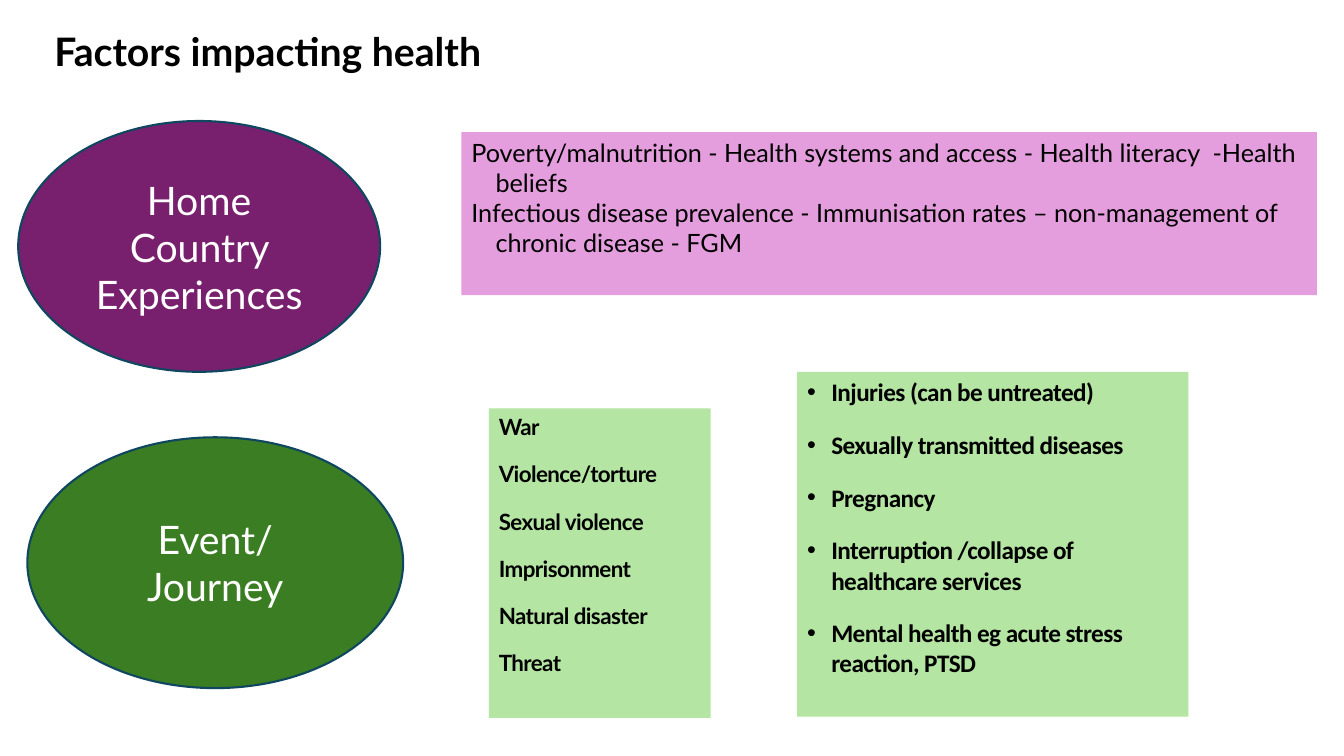
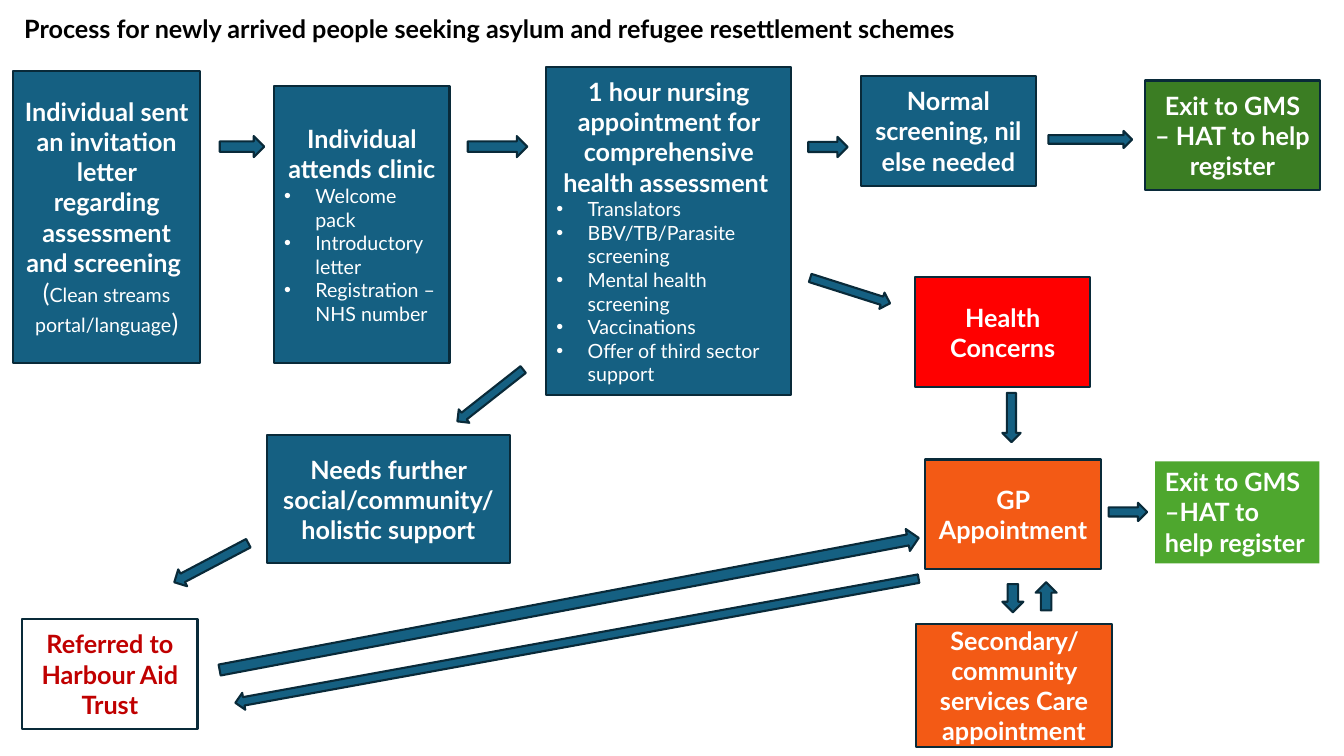
from dataclasses import dataclass, field
from typing import Optional

from lxml.etree import SubElement
from pptx import Presentation
from pptx.dml.color import RGBColor
from pptx.enum.shapes import MSO_SHAPE as Preset
from pptx.enum.text import MSO_ANCHOR as Anchor, PP_ALIGN as Align
from pptx.oxml.ns import qn
from pptx.util import Cm, Pt

FONT = "Lato"
BLACK, WHITE = "000000", "FFFFFF"
BLUE, NAVY, OCEAN = "156082", "092A39", "104760"
PURPLE, PINK = "78206E", "E59EDD"
DARK_GREEN, GREEN, PALE_GREEN = "3B7D23", "4EA72E", "B4E5A2"
RED, DARK_RED, ORANGE = "FF0000", "C00000", "F35A15"
LINE_WIDTH = 1.5
STEP_SIZE = (4.42, 2.77)


@dataclass(frozen=True)
class Run:
    text: str
    size: float = 18
    bold: bool = False
    font: str = FONT
    spacing: float = 0


@dataclass(frozen=True)
class Para:
    runs: tuple[Run, ...]
    align: Align = Align.LEFT
    bullet: bool = False
    indent: float = 0
    before: float = 0


@dataclass(frozen=True)
class Panel:
    left: float
    top: float
    width: float
    height: float
    fill: str
    paras: list[Para] = field(default_factory=list)
    color: str = WHITE
    line: Optional[str] = None
    anchor: Anchor = Anchor.MIDDLE
    preset: Preset = Preset.RECTANGLE
    rotation: float = 0


def rgb(color: str) -> RGBColor:
    return RGBColor.from_string(color)


def centred(text: str, size: float = 18, bold: bool = True) -> Para:
    return Para((Run(text, size, bold),), Align.CENTER)


def step_bullets(*items: str) -> list[Para]:
    return [Para((Run(item, 14),), bullet=True, indent=0.79) for item in items]


def spaced_list(items: list[str], before: float, bullet: bool, indent: float,
                **run_format) -> list[Para]:
    """Bold, slightly condensed paragraphs with a gap above all but the first."""
    return [Para((Run(item, bold=True, spacing=-0.4, **run_format),),
                 bullet=bullet, indent=indent, before=before if index else 0)
            for index, item in enumerate(items)]


def write_paras(frame, paras: list[Para], color: str) -> None:
    frame.word_wrap = True
    for index, para in enumerate(paras):
        paragraph = frame.add_paragraph() if index else frame.paragraphs[0]
        properties = paragraph._p.get_or_add_pPr()
        if para.indent:
            properties.set("marL", str(Cm(para.indent)))
            properties.set("indent", str(-Cm(para.indent)))
        if para.bullet:
            SubElement(properties, qn("a:buFont")).set("typeface", "Arial")
            SubElement(properties, qn("a:buChar")).set("char", "•")
        paragraph.alignment = para.align
        paragraph.space_before = Pt(para.before)
        for part in para.runs:
            run = paragraph.add_run()
            run.text = part.text
            formats = {"name": part.font, "size": Pt(part.size), "bold": part.bold}
            for attribute, value in formats.items():
                setattr(run.font, attribute, value)
            run.font.color.rgb = rgb(color)
            if part.spacing:
                run._r.get_or_add_rPr().set("spc", str(round(part.spacing * 100)))


def draw_title(slide, text: str, size: float, left: float, top: float,
               width: float, height: float) -> None:
    title = slide.shapes.add_textbox(Cm(left), Cm(top), Cm(width), Cm(height))
    write_paras(title.text_frame, [Para((Run(text, size, True),))], BLACK)


def draw_panel(slide, panel: Panel) -> None:
    shape = slide.shapes.add_shape(panel.preset, Cm(panel.left), Cm(panel.top),
                                   Cm(panel.width), Cm(panel.height))
    shape.shadow.inherit = False
    shape.rotation = panel.rotation
    shape.fill.solid()
    shape.fill.fore_color.rgb = rgb(panel.fill)
    if panel.line:
        shape.line.color.rgb = rgb(panel.line)
        shape.line.width = Pt(LINE_WIDTH)
    else:
        shape.line.fill.background()
    shape.text_frame.vertical_anchor = panel.anchor
    write_paras(shape.text_frame, panel.paras, panel.color)


def step(left: float, top: float, heading: str, fill: str = BLUE,
         size: tuple[float, float] = STEP_SIZE, details: tuple[Para, ...] = (),
         color: str = WHITE) -> Panel:
    return Panel(left, top, *size, fill, [centred(heading), *details], color, NAVY)


def arrow(left: float, top: float, length: float, thickness: float,
          rotation: float = 0) -> Panel:
    return Panel(left, top, length, thickness, BLUE, line=NAVY,
                 preset=Preset.RIGHT_ARROW, rotation=rotation)


def theme_oval(left: float, top: float, width: float, fill: str,
               *lines: str) -> Panel:
    return Panel(left, top, width, 6.32, fill,
                 [centred(line, 28, False) for line in lines],
                 line=OCEAN, preset=Preset.OVAL)


def factor_box(left: float, top: float, width: float, height: float, fill: str,
               paras: list[Para]) -> Panel:
    return Panel(left, top, width, height, fill, paras, BLACK, anchor=Anchor.TOP)


HOME_FACTORS = [
    "Poverty/malnutrition - Health systems and access - Health literacy  -Health beliefs",
    "Infectious disease prevalence - Immunisation rates – non-management of chronic disease - FGM",
]
EVENTS = ["War", "Violence/torture", "Sexual violence", "Imprisonment",
          "Natural disaster", "Threat"]
EFFECTS = ["Injuries (can be untreated)", "Sexually transmitted diseases", "Pregnancy",
           "Interruption /collapse of healthcare services",
           "Mental health eg acute stress reaction, PTSD"]

FACTORS = [
    theme_oval(0.46, 3.05, 9.12, PURPLE, "Home Country Experiences"),
    theme_oval(0.69, 11.02, 9.47, DARK_GREEN, "Event/", "Journey"),
    factor_box(11.63, 3.33, 21.56, 4.11, PINK,
               [Para((Run(text),), indent=0.61) for text in HOME_FACTORS]),
    factor_box(12.32, 10.29, 5.59, 7.8, PALE_GREEN,
               spaced_list(EVENTS, 14.5, False, 0.58, size=16)),
    factor_box(20.09, 9.37, 9.86, 8.69, PALE_GREEN,
               spaced_list(EFFECTS, 16, True, 0.61, font="Calibri")),
]

PORTAL_NOTE = Para((Run("("), Run("Clean streams portal/language", 14), Run(")")),
                   Align.CENTER)

PROCESS = [
    step(0.33, 1.8,
         "Individual sent an invitation letter regarding assessment and screening ",
         size=(4.72, 7.34), details=(PORTAL_NOTE,)),
    step(6.91, 2.16, "Individual attends clinic", size=(4.42, 6.99),
         details=step_bullets("Welcome pack", "Introductory letter",
                              "Registration – NHS number")),
    step(13.77, 1.68,
         "1 hour nursing appointment for comprehensive health assessment ",
         size=(6.17, 8.28),
         details=step_bullets("Translators", "BBV/TB/Parasite screening",
                              "Mental health screening", "Vaccinations",
                              "Offer of third sector support")),
    step(21.69, 1.91, "Normal screening, nil else needed"),
    step(28.85, 2.03, "Exit to GMS – HAT to help register", DARK_GREEN),
    step(23.06, 6.99, "Health Concerns", RED),
    step(23.32, 11.58, "GP Appointment", ORANGE),
    step(23.09, 15.72, "Secondary/community services Care appointment", ORANGE,
         (4.93, 3.1)),
    step(6.73, 10.97, "Needs further social/community/holistic support",
         size=(6.12, 3.23)),
    step(0.56, 15.6, "Referred to Harbour Aid Trust", WHITE, color=DARK_RED),
    Panel(29.11, 11.63, 4.14, 2.57, GREEN,
          [Para((Run("Exit to GMS –HAT to help register", bold=True),))],
          anchor=Anchor.TOP),
    arrow(5.54, 3.43, 1.12, 0.53),
    arrow(11.79, 3.43, 1.5, 0.53),
    arrow(20.37, 3.45, 0.99, 0.51),
    arrow(26.42, 3.3, 2.11, 0.43),
    arrow(20.37, 7.11, 2.11, 0.43, 17.6),
    arrow(24.87, 10.29, 1.24, 0.46, 90),
    arrow(27.94, 12.67, 0.97, 0.46),
    arrow(25.17, 14.81, 0.71, 0.53, 90),
    arrow(26.01, 14.76, 0.71, 0.53, 270),
    arrow(11.3, 9.75, 2.11, 0.43, 141.8),
    arrow(4.27, 13.94, 2.11, 0.48, 152.2),
    arrow(5.38, 14.94, 17.93, 0.56, 349.3),
    arrow(5.79, 15.93, 17.5, 0.43, 169.7),
]


def main() -> None:
    deck = Presentation()
    deck.slide_width, deck.slide_height = Cm(33.87), Cm(19.05)
    blank = deck.slide_layouts[6]
    pages = [
        (("Factors impacting health", 28, 1.12, 0.56, 21.56, 1.45), FACTORS),
        (("Process for newly arrived people seeking asylum and refugee "
          "resettlement schemes", 18, 0.36, 0.2, 25.73, 1.02), PROCESS),
    ]
    for title, panels in pages:
        slide = deck.slides.add_slide(blank)
        draw_title(slide, *title)
        for panel in panels:
            draw_panel(slide, panel)
    deck.save("out.pptx")


if __name__ == "__main__":
    main()
